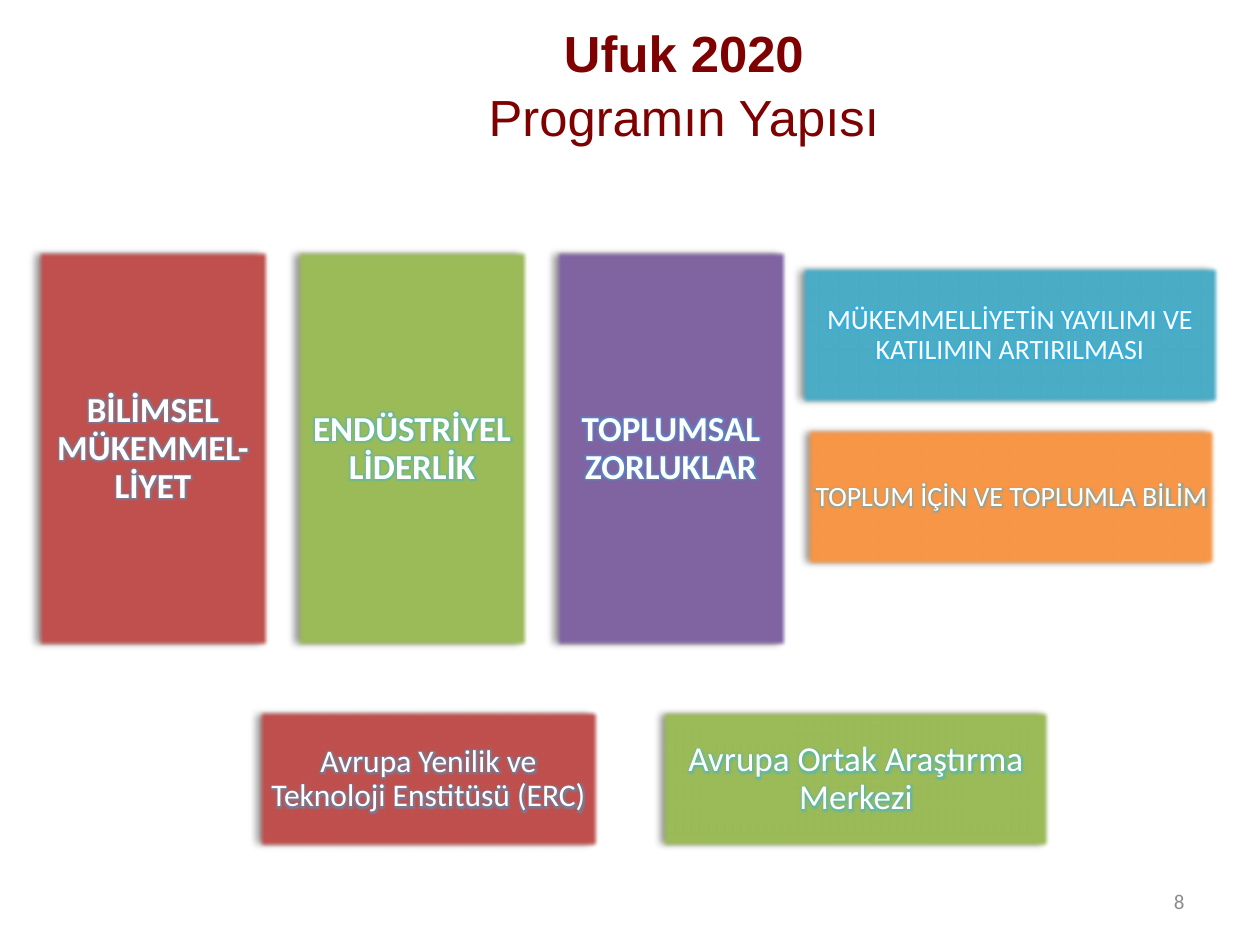
from lxml.etree import SubElement
from pptx import Presentation
from pptx.dml.color import RGBColor
from pptx.enum.shapes import MSO_SHAPE
from pptx.enum.text import MSO_ANCHOR, PP_ALIGN
from pptx.oxml.ns import qn
from pptx.util import Emu, Pt

SCALE = 914400 / 126
WHITE = RGBColor(0xFF, 0xFF, 0xFF)
MAROON = RGBColor(0x7E, 0x00, 0x00)
GREY = RGBColor(0x8C, 0x8C, 0x8C)
RED = RGBColor(0xC0, 0x50, 0x4D)
GREEN = RGBColor(0x9B, 0xBB, 0x59)
PURPLE = RGBColor(0x80, 0x64, 0xA2)
TEAL = RGBColor(0x4B, 0xAC, 0xC6)
ORANGE = RGBColor(0xF7, 0x96, 0x46)
BLACK = RGBColor(0x00, 0x00, 0x00)
GLOW = RGBColor(0x18, 0xB6, 0xF9)


def px(length):
    """Turn px into EMU."""
    return Emu(round(length * SCALE))


def add_effect(effects, tag, color, **attributes):
    """Append an effect in a 40 % opaque colour to an effect list."""
    effect = SubElement(effects, qn(tag), attributes)
    tint = SubElement(effect, qn("a:srgbClr"), val=str(color))
    SubElement(tint, qn("a:alpha"), val="40000")


def write(paragraph, text, size, color=WHITE, font="Calibri", bold=False, glow=False):
    """Add a formatted run to a paragraph."""
    run = paragraph.add_run()
    run.text = text
    run.font.size = Pt(size)
    run.font.bold = bold
    run.font.name = font
    run.font.color.rgb = color
    if glow:
        properties = run.font.fill._xPr
        effects = SubElement(properties, qn("a:effectLst"))
        properties.find(qn("a:solidFill")).addnext(effects)
        add_effect(effects, "a:glow", GLOW, rad="63500")


def set_up_paragraph(frame, align, spacing):
    """Centre a wrapping text frame vertically and return its first paragraph."""
    frame.word_wrap = True
    frame.vertical_anchor = MSO_ANCHOR.MIDDLE
    paragraph = frame.paragraphs[0]
    paragraph.alignment = align
    paragraph.line_spacing = spacing
    return paragraph


def add_block(slide, box, text, fill, size, margin=9, bold=False):
    """Add a soft-edged coloured block with glowing text."""
    block = slide.shapes.add_shape(MSO_SHAPE.RECTANGLE, *map(px, box))
    block.fill.solid()
    block.fill.fore_color.rgb = fill
    block.line.fill.background()
    block.shadow.inherit = False
    effects = block._element.spPr.find(qn("a:effectLst"))
    add_effect(effects, "a:outerShdw", BLACK, blurRad="50800", dist="38100",
               dir="10800000", algn="r", rotWithShape="0")
    SubElement(effects, qn("a:softEdge"), rad="31750")
    frame = block.text_frame
    frame.margin_left = frame.margin_right = px(margin)
    frame.margin_top = frame.margin_bottom = px(margin)
    paragraph = set_up_paragraph(frame, PP_ALIGN.CENTER, 0.9)
    write(paragraph, text, size, bold=bold, glow=True)


def add_title(slide, box):
    """Add the two-line title."""
    title = slide.shapes.add_textbox(*map(px, box))
    paragraph = set_up_paragraph(title.text_frame, PP_ALIGN.CENTER, 1.06)
    write(paragraph, "Ufuk 2020", 29, MAROON, "Arial", bold=True)
    paragraph.add_line_break()
    write(paragraph, "Programın Yapısı", 29, MAROON, "Arial")


def add_priorities(slide, box):
    """Add the three equal priority columns across the box."""
    left, top, width, height = box
    column = 236
    priorities = [("BİLİMSEL MÜKEMMEL-LİYET", RED),
                  ("ENDÜSTRİYEL LİDERLİK", GREEN),
                  ("TOPLUMSAL ZORLUKLAR", PURPLE)]
    step = (width - column) // (len(priorities) - 1)
    for index, (text, fill) in enumerate(priorities):
        add_block(slide, (left + index * step, top, column, height), text, fill,
                  20, margin=10, bold=True)


def add_cross_cutting(slide, box):
    """Add the two stacked cross-cutting blocks."""
    left, top, width, height = box
    row = 141
    add_block(slide, (left, top, width, row),
              "MÜKEMMELLİYETİN YAYILIMI VE KATILIMIN ARTIRILMASI", TEAL, 16)
    add_block(slide, (left + 6, top + height - row, width - 9, row),
              "TOPLUM İÇİN VE TOPLUMLA BİLİM", ORANGE, 16)


def add_institutions(slide, box):
    """Add the two institution blocks at the ends of the box."""
    left, top, width, height = box
    institute, centre = 345, 392
    add_block(slide, (left, top, institute, height),
              "Avrupa Yenilik ve Teknoloji Enstitüsü (ERC)", RED, 18)
    add_block(slide, (left + width - centre, top, centre, height),
              "Avrupa Ortak Araştırma Merkezi", GREEN, 20, margin=10)


def add_page_number(slide, box):
    """Add the page number."""
    number = slide.shapes.add_textbox(*map(px, box))
    paragraph = set_up_paragraph(number.text_frame, PP_ALIGN.RIGHT, 1.0)
    write(paragraph, "8", 12, GREY)


def main():
    """Build and save the slide."""
    deck = Presentation()
    deck.slide_width, deck.slide_height = px(1260), px(945)
    slide = deck.slides.add_slide(deck.slide_layouts[6])
    add_page_number(slide, (903, 876, 294, 50))
    add_priorities(slide, (35, 249, 754, 400))
    add_cross_cutting(slide, (799, 265, 422, 303))
    add_institutions(slide, (256, 709, 796, 141))
    add_title(slide, (108, 0, 1152, 165))
    deck.save("out.pptx")


if __name__ == "__main__":
    main()
